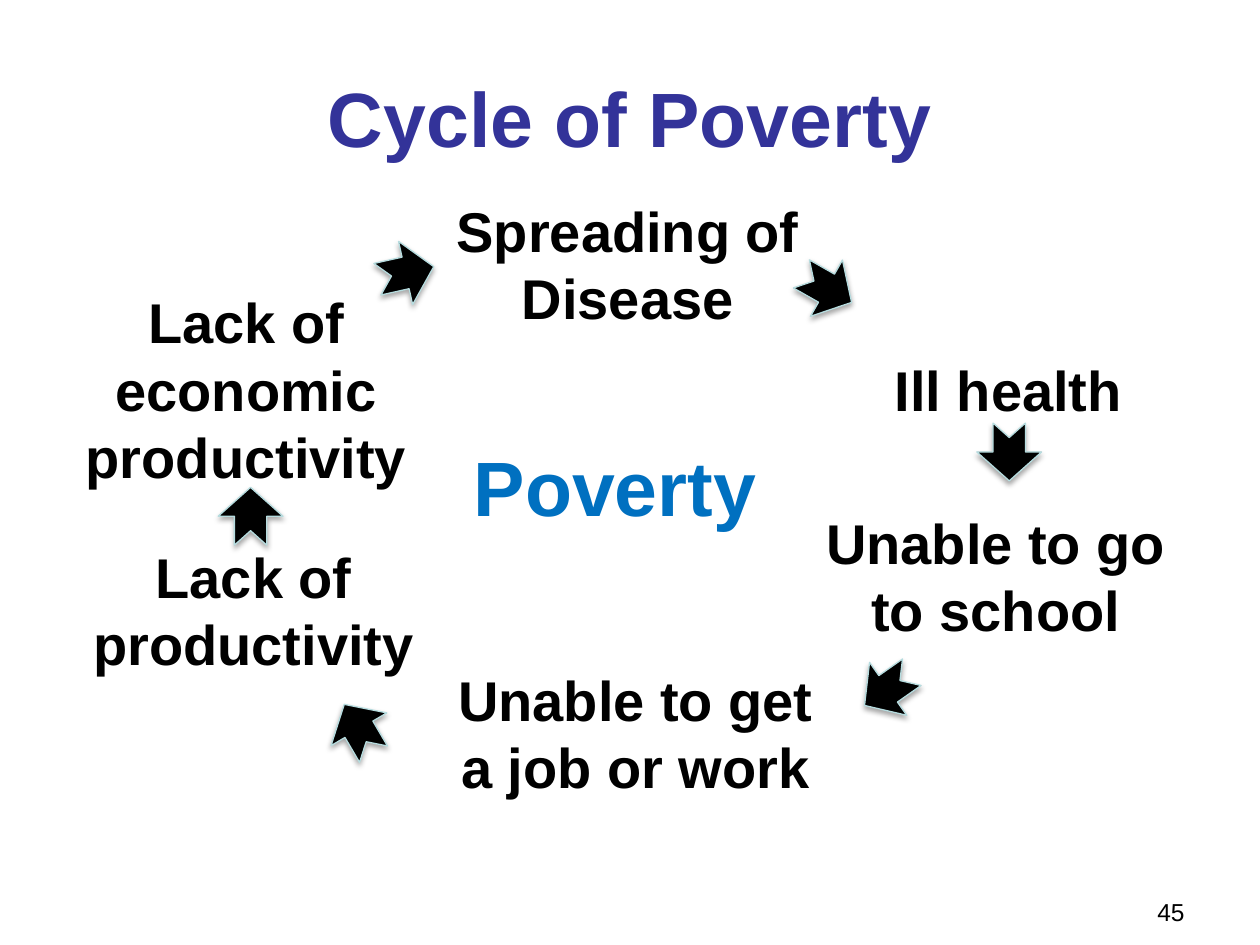
from dataclasses import dataclass

import lxml.etree
import pptx
import pptx.dml.color
import pptx.enum.shapes
import pptx.enum.text
import pptx.oxml.ns
import pptx.util

Pt = pptx.util.Pt
RGB = pptx.dml.color.RGBColor
ALIGN = pptx.enum.text.PP_ALIGN
ANCHOR = pptx.enum.text.MSO_ANCHOR

BLACK = RGB(0x00, 0x00, 0x00)
NAVY = RGB(0x33, 0x33, 0x99)
BLUE = RGB(0x00, 0x70, 0xC0)
PALE = RGB(0xB6, 0xDC, 0xDF)

WIDE, TALL = 218, 90
LONG, THICK = 33, 37


@dataclass
class Label:
    text: str
    left: float
    top: float
    width: float = WIDE
    height: float = TALL
    size: int = 32
    color: RGB = BLACK
    bold: bool = True
    align: ALIGN = ALIGN.CENTER
    anchor: ANCHOR = ANCHOR.MIDDLE


@dataclass
class Arrow:
    left: float
    top: float
    angle: float


LABELS = [
    Label("Cycle of Poverty", 36, 21.6, width=648, size=44, color=NAVY),
    Label("Poverty", 242.6, 232.6, size=44, color=BLUE),
    Label("Spreading of Disease", 249.8, 105.8),
    Label("Ill health", 467.3, 194.4, height=55.4),
    Label("Unable to go to school", 460.1, 283.7),
    Label("Unable to get a job or work", 254.2, 373.7),
    Label("Lack of productivity", 36, 303.1),
    Label("Lack of economic productivity", 31.7, 177.1),
    Label("45", 650.9, 509, width=33.1, height=20.2, size=14, bold=False,
          align=ALIGN.RIGHT, anchor=ANCHOR.TOP),
]

ARROWS = [
    Arrow(455.8, 146.2, 29.6),
    Arrow(560.2, 239.8, 90),
    Arrow(491, 375.1, 144.9),
    Arrow(188.6, 398.2, 239.6),
    Arrow(126.7, 276.5, 270),
    Arrow(215.3, 137.5, 347.4),
]


def add_label(slide, label: Label) -> None:
    box = slide.shapes.add_textbox(
        Pt(label.left), Pt(label.top), Pt(label.width), Pt(label.height))
    frame = box.text_frame
    frame.word_wrap = True
    frame.vertical_anchor = label.anchor
    para = frame.paragraphs[0]
    para.alignment = label.align
    run = para.add_run()
    run.text = label.text
    style = {"name": "Arial", "size": Pt(label.size), "bold": label.bold}
    for key, value in style.items():
        setattr(run.font, key, value)
    run.font.color.rgb = label.color


def add_shadow(shape) -> None:
    qn = pptx.oxml.ns.qn
    shape.shadow.inherit = False
    effects = shape._element.spPr.find(qn("a:effectLst"))
    outer = lxml.etree.SubElement(
        effects, qn("a:outerShdw"), blurRad=str(Pt(3.1)), dist=str(Pt(1.8)),
        dir="5400000", rotWithShape="0")
    color = lxml.etree.SubElement(outer, qn("a:srgbClr"), val=str(BLACK))
    lxml.etree.SubElement(color, qn("a:alpha"), val="35000")


def add_arrow(slide, arrow: Arrow) -> None:
    shape = slide.shapes.add_shape(
        pptx.enum.shapes.MSO_SHAPE.NOTCHED_RIGHT_ARROW,
        Pt(arrow.left), Pt(arrow.top), Pt(LONG), Pt(THICK))
    shape.rotation = arrow.angle
    shape.fill.solid()
    shape.fill.fore_color.rgb = BLACK
    shape.line.color.rgb = PALE
    shape.line.width = Pt(0.75)
    add_shadow(shape)


def main() -> None:
    deck = pptx.Presentation()
    deck.slide_width, deck.slide_height = Pt(720), Pt(540)
    slide = deck.slides.add_slide(deck.slide_layouts[6])
    for label in LABELS:
        add_label(slide, label)
    for arrow in ARROWS:
        add_arrow(slide, arrow)
    deck.save("out.pptx")


if __name__ == "__main__":
    main()
